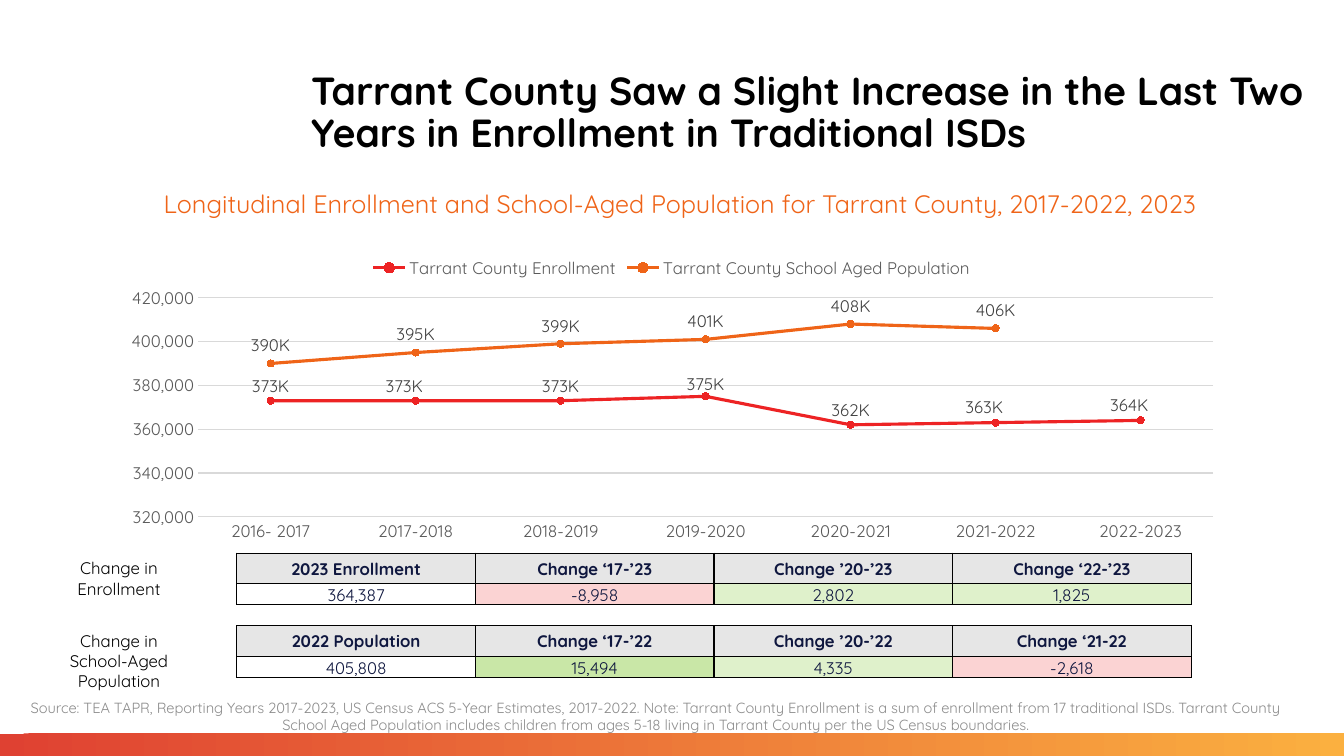
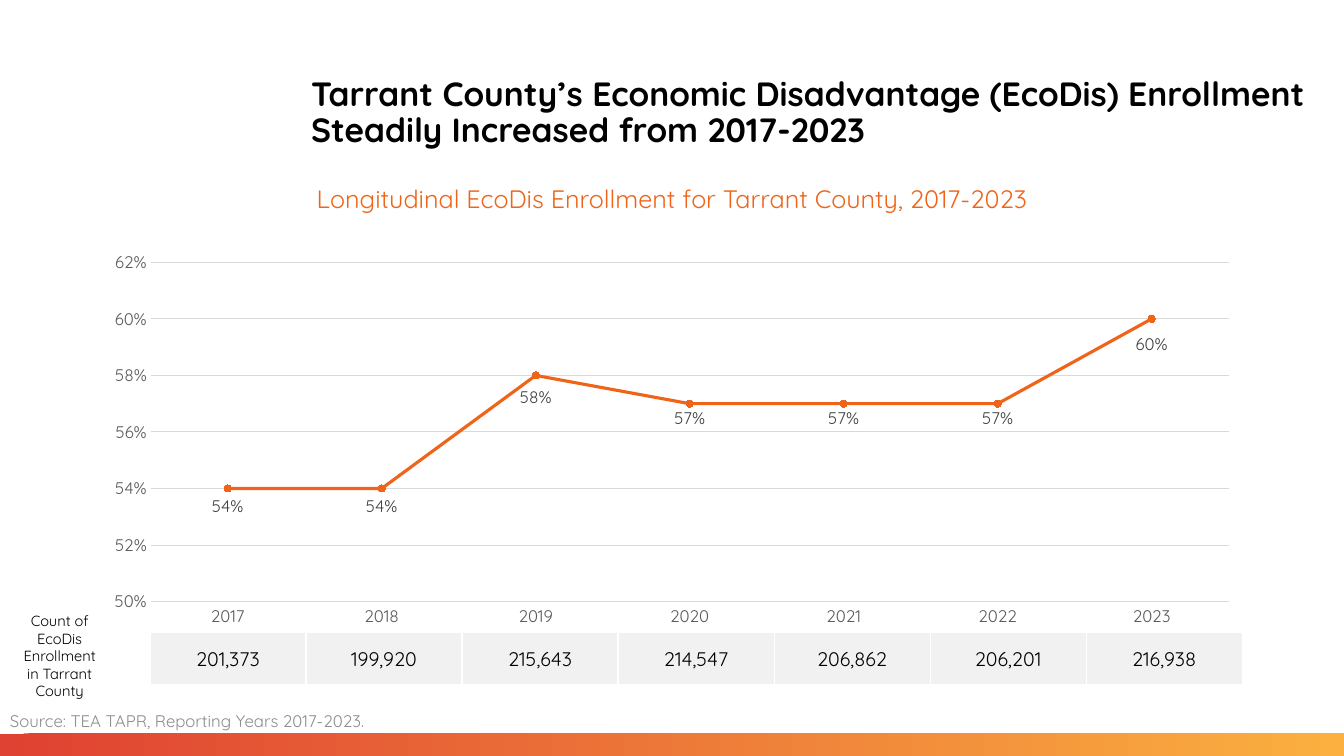
from collections import namedtuple

from pptx import Presentation
from pptx.chart.data import CategoryChartData
from pptx.dml.color import RGBColor
from pptx.enum.chart import XL_CHART_TYPE, XL_LABEL_POSITION, XL_LEGEND_POSITION, XL_MARKER_STYLE, XL_TICK_MARK
from pptx.enum.shapes import MSO_SHAPE
from pptx.enum.text import MSO_ANCHOR, PP_ALIGN
from pptx.oxml import parse_xml
from pptx.oxml.ns import nsdecls
from pptx.util import Cm, Pt

FONT = "Quicksand"
BLACK = "000000"
WHITE = "FFFFFF"
ORANGE = "EF6418"
RED = "ED2324"
NAVY = "0F173F"
SOURCE_GRAY = "8C8C8C"
AXIS_GRAY = "595959"
LABEL_GRAY = "404040"
GRID_GRAY = "D9D9D9"
HEADER_GRAY = "E6E6E6"
COUNT_GRAY = "F1F1F1"
PINK = "FBD3D3"
LIGHT_GREEN = "DFF1CB"
GREEN = "C9E7A7"

SLIDE_WIDTH, SLIDE_HEIGHT = 33.87, 19.05
BAND_HEIGHT = 0.56

Box = namedtuple("Box", "left top width height")
Line = namedtuple("Line", "name color values position number_format offsets")


def color(hex_string):
    return RGBColor.from_string(hex_string)


def lengths(box):
    return [Cm(value) for value in box]


def format_font(font, size, hex_string, bold=False):
    font.name = FONT
    font.size = Pt(size)
    font.bold = bold
    font.color.rgb = color(hex_string)


def write_text(frame, text, size=12, hex_string=BLACK, bold=False,
               align=PP_ALIGN.CENTER, spacing=None):
    paragraph = frame.paragraphs[0]
    paragraph.alignment = align
    if spacing:
        paragraph.line_spacing = spacing
    run = paragraph.add_run()
    run.text = text
    format_font(run.font, size, hex_string, bold)


def add_text(slide, box, text, anchor=MSO_ANCHOR.TOP, **text_format):
    frame = slide.shapes.add_textbox(*lengths(box)).text_frame
    frame.word_wrap = True
    frame.vertical_anchor = anchor
    write_text(frame, text, **text_format)


def add_band(slide, box):
    band = slide.shapes.add_shape(MSO_SHAPE.RECTANGLE, *lengths(box))
    band.shadow.inherit = False
    band.line.fill.background()
    band.fill.gradient()
    band.fill.gradient_angle = 1
    for stop, hex_string in zip(band.fill.gradient_stops, ("DF4132", "FBB040")):
        stop.color.rgb = color(hex_string)


def add_base_slide(presentation, title, title_size, title_width, subtitle, subtitle_box):
    slide = presentation.slides.add_slide(presentation.slide_layouts[6])
    add_band(slide, Box(0, SLIDE_HEIGHT - BAND_HEIGHT, SLIDE_WIDTH, BAND_HEIGHT))
    add_text(slide, Box(7.59, 1.02, title_width, 3.68), title, anchor=MSO_ANCHOR.MIDDLE,
             size=title_size, bold=True, align=PP_ALIGN.LEFT, spacing=0.9)
    add_text(slide, subtitle_box, subtitle, size=18, hex_string=ORANGE)
    return slide


def manual_layout(**values):
    parts = "".join(f'<c:{name} val="{value}"/>' for name, value in values.items())
    return parse_xml(f'<c:layout {nsdecls("c")}><c:manualLayout>{parts}'
                     '</c:manualLayout></c:layout>')


def place_plot(chart, plot_box):
    plot_area = chart.element.xpath(".//c:plotArea")[0]
    for layout in plot_area.xpath("./c:layout"):
        plot_area.remove(layout)
    left, top, width, height = plot_box
    plot_area.insert(0, manual_layout(layoutTarget="inner", xMode="edge", yMode="edge",
                                      x=left, y=top, w=width, h=height))


def format_axes(chart, minimum, maximum, step, number_format):
    for axis in (chart.category_axis, chart.value_axis):
        axis.major_tick_mark = axis.minor_tick_mark = XL_TICK_MARK.NONE
        format_font(axis.tick_labels.font, 12, AXIS_GRAY)
    category_line = chart.category_axis.format.line
    category_line.color.rgb = color(GRID_GRAY)
    category_line.width = Pt(0.75)
    value_axis = chart.value_axis
    value_axis.minimum_scale = minimum
    value_axis.maximum_scale = maximum
    value_axis.major_unit = step
    value_axis.format.line.fill.background()
    value_axis.tick_labels.number_format = number_format
    value_axis.tick_labels.number_format_is_linked = False
    grid_line = value_axis.major_gridlines.format.line
    grid_line.color.rgb = color(GRID_GRAY)
    grid_line.width = Pt(0.75)


def format_series(series, line):
    series.smooth = False
    series.format.line.color.rgb = color(line.color)
    series.format.line.width = Pt(2.25)
    marker = series.marker
    marker.style = XL_MARKER_STYLE.CIRCLE
    marker.size = 5
    marker.format.fill.solid()
    marker.format.fill.fore_color.rgb = color(line.color)
    marker.format.line.color.rgb = color(line.color)
    labels = series.data_labels
    labels.show_value = True
    labels.position = line.position
    labels.number_format = line.number_format
    labels.number_format_is_linked = False
    format_font(labels.font, 12, LABEL_GRAY)


def shift_labels(chart, series, line):
    for index in range(len(line.offsets)):
        label = series.points[index].data_label
        format_font(label.font, 12, LABEL_GRAY)
        label.position = line.position
    for element, (x, y) in zip(chart.element.xpath(".//c:dLbl"), line.offsets):
        number_format = parse_xml(f'<c:numFmt {nsdecls("c")} sourceLinked="0"/>')
        number_format.set("formatCode", line.number_format)
        index_element = element.xpath("./c:idx")[0]
        index_element.addnext(number_format)
        index_element.addnext(manual_layout(x=x, y=y))


def add_line_chart(slide, box, plot_box, categories, lines, scale, axis_format, legend=False):
    data = CategoryChartData()
    data.categories = categories
    for line in lines:
        data.add_series(line.name, line.values)
    chart = slide.shapes.add_chart(XL_CHART_TYPE.LINE_MARKERS, *lengths(box), data).chart
    chart.has_title = False
    format_font(chart.font, 10, BLACK)
    chart.has_legend = legend
    if legend:
        chart.legend.position = XL_LEGEND_POSITION.TOP
        chart.legend.include_in_layout = False
        format_font(chart.legend.font, 12, AXIS_GRAY)
    plot = chart.plots[0]
    plot.vary_by_categories = False
    format_axes(chart, *scale, axis_format)
    for series, line in zip(plot.series, lines):
        format_series(series, line)
        if line.offsets:
            shift_labels(chart, series, line)
    place_plot(chart, plot_box)


def set_borders(cell, hex_string):
    properties = cell._tc.get_or_add_tcPr()
    for index, side in enumerate(("lnL", "lnR", "lnT", "lnB")):
        properties.insert(index, parse_xml(
            f'<a:{side} {nsdecls("a")} w="{Pt(1)}"><a:solidFill>'
            f'<a:srgbClr val="{hex_string}"/></a:solidFill></a:{side}>'))


def fill_cell(cell, text, fill, border, tight=True, **text_format):
    if fill:
        cell.fill.solid()
        cell.fill.fore_color.rgb = color(fill)
    else:
        cell.fill.background()
    if tight:
        cell.vertical_anchor = MSO_ANCHOR.MIDDLE
        cell.margin_left = cell.margin_right = cell.margin_top = Cm(0.03)
        cell.margin_bottom = Cm(0)
    write_text(cell.text_frame, text, **text_format)
    set_borders(cell, border)


def add_plain_table(slide, box, row_heights, column_count):
    table = slide.shapes.add_table(len(row_heights), column_count, *lengths(box)).table
    table.first_row = table.horz_banding = False
    for column in table.columns:
        column.width = Cm(box.width / column_count)
    for row, height in zip(table.rows, row_heights):
        row.height = Cm(height)
    return table


def add_change_row(slide, box, label, label_height, entries):
    add_text(slide, Box(box.left, box.top, 3.2, label_height), label)
    table_box = Box(box.left + 4.57, box.top, box.width - 4.57, box.height)
    table = add_plain_table(slide, table_box, (0.71, 0.48), len(entries))
    for column, (header, value, fill) in enumerate(entries):
        fill_cell(table.cell(0, column), header, HEADER_GRAY, BLACK, tight=False,
                  hex_string=NAVY, bold=True)
        fill_cell(table.cell(1, column), value, fill, BLACK, hex_string=NAVY)


def add_count_row(slide, box, label, values):
    add_text(slide, Box(box.left, box.top - 0.64, 2.51, 2.49), label, size=10.5)
    table_box = Box(box.left + 3.53, box.top, box.width - 3.53, box.height)
    table = add_plain_table(slide, table_box, (box.height,), len(values))
    for column, value in enumerate(values):
        fill_cell(table.cell(0, column), value, COUNT_GRAY, WHITE, size=14)


def build_enrollment_slide(presentation):
    slide = add_base_slide(
        presentation,
        "Tarrant County Saw a Slight Increase in the Last Two Years in Enrollment in Traditional ISDs",
        28, 25.76,
        "Longitudinal Enrollment and School-Aged Population for Tarrant County, 2017-2022, 2023",
        Box(1.17, 4.62, 31.93, 1.04))
    lines = [
        Line("Tarrant County Enrollment", RED,
             (373000, 373000, 373000, 375000, 362000, 363000, 364000),
             XL_LABEL_POSITION.ABOVE, "#,##0,\\K",
             ((0, 0.01), (-0.01, 0.01), (0, 0.01), (0, 0.02), (0, 0.01), (-0.01, 0.01), (-0.01, 0.01))),
        Line("Tarrant County School Aged Population", ORANGE,
             (390000, 395000, 399000, 401000, 408000, 406000, None),
             XL_LABEL_POSITION.ABOVE, "#,##0,\\K", ()),
    ]
    years = ["2016- 2017"] + [f"{year}-{year + 1}" for year in range(2017, 2023)]
    add_line_chart(slide, Box(2.72, 6.2, 28.42, 7.67), Box(0.08, 0.17, 0.9, 0.72), years, lines,
                   (320000, 420000, 20000), "#,##0", legend=True)
    add_change_row(slide, Box(1.4, 13.94, 28.62, 1.3), "Change in Enrollment", 1.27, [
        ("2023 Enrollment", "364,387", None),
        ("Change ‘17-’23", "-8,958", PINK),
        ("Change ’20-’23", "2,802", LIGHT_GREEN),
        ("Change ‘22-’23", "1,825", LIGHT_GREEN)])
    add_change_row(slide, Box(1.4, 15.77, 28.62, 1.3), "Change in School-Aged Population", 1.8, [
        ("2022 Population", "405,808", None),
        ("Change ‘17-’22", "15,494", GREEN),
        ("Change ’20-’22", "4,335", LIGHT_GREEN),
        ("Change ‘21-22", "-2,618", PINK)])
    add_text(slide, Box(0, 17.53, 33.07, 1.04),
             "Source: TEA TAPR, Reporting Years 2017-2023, US Census ACS 5-Year Estimates, 2017-2022. "
             "Note: Tarrant County Enrollment is a sum of enrollment from 17 traditional ISDs. "
             "Tarrant County School Aged Population includes children from ages 5-18 living in "
             "Tarrant County per the US Census boundaries.",
             anchor=MSO_ANCHOR.MIDDLE, size=10.5, hex_string=SOURCE_GRAY)


def build_disadvantage_slide(presentation):
    slide = add_base_slide(
        presentation,
        "Tarrant County’s Economic Disadvantage (EcoDis) Enrollment Steadily Increased from 2017-2023",
        24, 26.26,
        "Longitudinal EcoDis Enrollment for Tarrant County, 2017-2023",
        Box(0.97, 4.5, 31.93, 1.04))
    line = Line("Series 1", ORANGE, (0.54, 0.54, 0.58, 0.57, 0.57, 0.57, 0.6),
                XL_LABEL_POSITION.BELOW, "0%",
                ((0, 0), (0, 0), (0, 0.01), (0, -0.01), (0, -0.01), (0, -0.01), (0, 0.02)))
    years = [str(year) for year in range(2017, 2024)]
    add_line_chart(slide, Box(2.34, 6.12, 29.21, 9.83), Box(0.05, 0.05, 0.93, 0.87), years, [line],
                   (0.5, 0.62, 0.02), "0%")
    add_count_row(slide, Box(0.25, 15.93, 31.06, 1.32), "Count of EcoDis Enrollment in Tarrant County",
                  ("201,373", "199,920", "215,643", "214,547", "206,862", "206,201", "216,938"))
    add_text(slide, Box(0, 17.65, 25.55, 1.04), "Source: TEA TAPR, Reporting Years 2017-2023.",
             anchor=MSO_ANCHOR.MIDDLE, hex_string=SOURCE_GRAY, align=PP_ALIGN.LEFT)


def main():
    presentation = Presentation()
    presentation.slide_width = Cm(SLIDE_WIDTH)
    presentation.slide_height = Cm(SLIDE_HEIGHT)
    build_enrollment_slide(presentation)
    build_disadvantage_slide(presentation)
    presentation.save("out.pptx")


if __name__ == "__main__":
    main()
